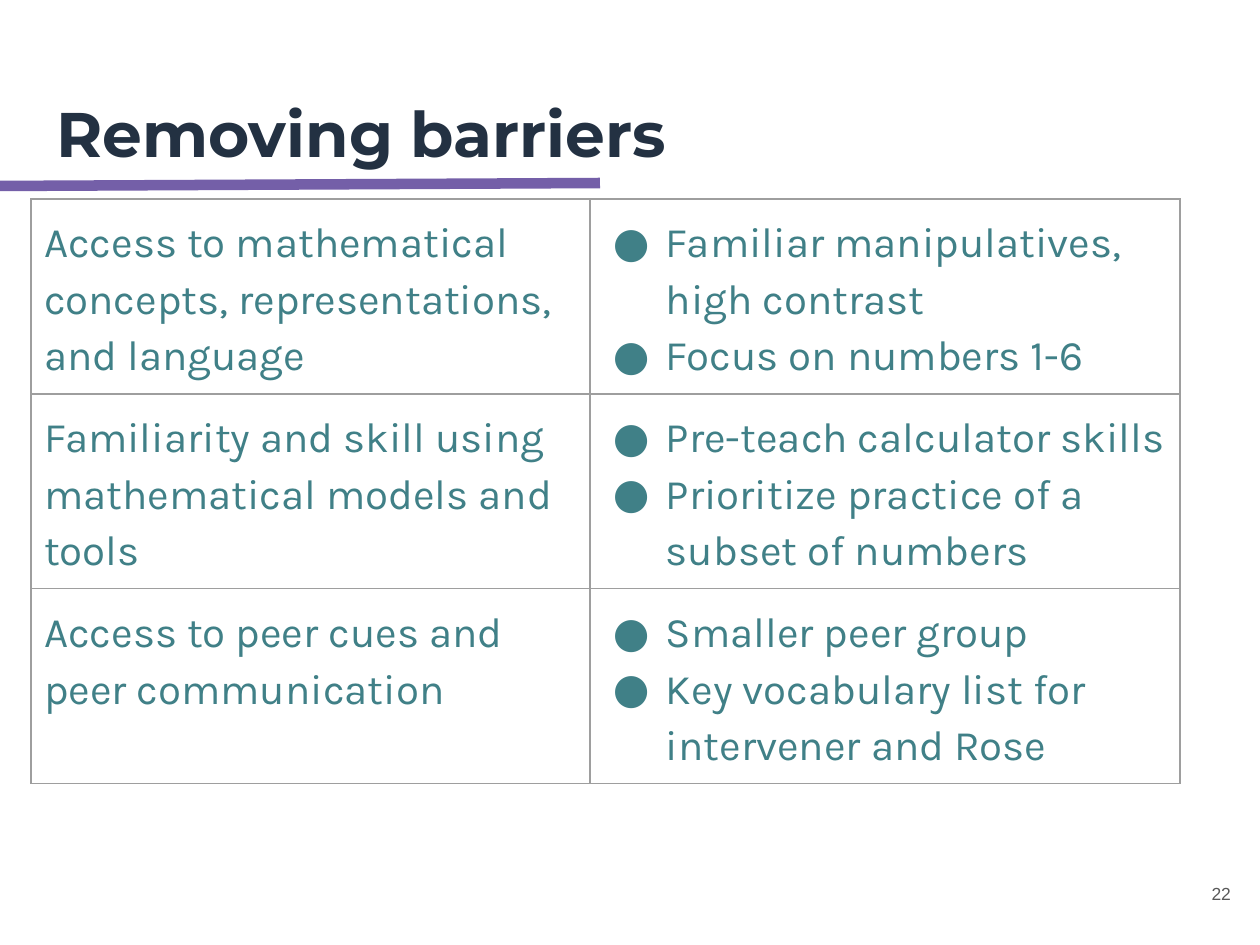
from lxml import etree
from pptx import Presentation
from pptx.dml.color import RGBColor
from pptx.enum.shapes import MSO_CONNECTOR
from pptx.enum.text import MSO_ANCHOR, MSO_AUTO_SIZE, PP_ALIGN
from pptx.oxml.ns import qn
from pptx.util import Emu, Pt

STRAIGHT = MSO_CONNECTOR.STRAIGHT
TOP, MIDDLE = MSO_ANCHOR.TOP, MSO_ANCHOR.MIDDLE
NO_FIT = MSO_AUTO_SIZE.NONE
LEFT, RIGHT = PP_ALIGN.LEFT, PP_ALIGN.RIGHT

NAVY = RGBColor(0x23, 0x31, 0x42)
TEAL = RGBColor(0x40, 0x80, 0x87)
PURPLE = RGBColor(0x74, 0x5F, 0xA8)
GRID = RGBColor(0x9E, 0x9E, 0x9E)
GRAY = RGBColor(0x59, 0x59, 0x59)

PX_PER_INCH = 126
INSET = 13
COLUMNS = (559, 590)
ROW_HEIGHT = 194
BARRIERS = [
    ("Access to mathematical concepts, representations, and language",
     ["Familiar manipulatives, high contrast", "Focus on numbers 1-6"]),
    ("Familiarity and skill using mathematical models and tools",
     ["Pre-teach calculator skills", "Prioritize practice of a subset of numbers"]),
    ("Access to peer cues and peer communication",
     ["Smaller peer group", "Key vocabulary list for intervener and Rose"]),
]


def px(n):
    return Emu(round(n * 914400 / PX_PER_INCH))


def set_font(font, name, size, color, bold=False):
    font.name, font.size, font.bold = name, Pt(size), bold
    font.color.rgb = color


def set_frame(obj):
    obj.margin_left = obj.margin_right = px(INSET)
    obj.margin_top = obj.margin_bottom = px(INSET)


def add_text(sp, text, box, anchor, align, *font):
    sp.left, sp.top, sp.width, sp.height = map(px, box)
    tf = sp.text_frame
    tf.word_wrap, tf.auto_size, tf.vertical_anchor = True, NO_FIT, anchor
    set_frame(tf)
    tf.text = text
    p = tf.paragraphs[0]
    p.alignment = align
    set_font(p.runs[0].font, *font)


def add_rule(s, x1, y1, x2, y2):
    line = s.shapes.add_connector(STRAIGHT, px(x1), px(y1), px(x2), px(y2))
    line.line.color.rgb, line.line.width = PURPLE, Pt(6)
    etree.SubElement(line._element.spPr, qn("a:effectLst"))


def add_bullet(p):
    pPr = p._p.get_or_add_pPr()
    pPr.set("marL", str(px(63)))
    pPr.set("indent", str(-px(53)))
    color = etree.SubElement(pPr, qn("a:buClr"))
    etree.SubElement(color, qn("a:srgbClr"), val=str(TEAL))
    etree.SubElement(pPr, qn("a:buFont"), typeface="Karla")
    etree.SubElement(pPr, qn("a:buChar"), char="●")


def set_borders(cell):
    tcPr = cell._tc.get_or_add_tcPr()
    for i, side in enumerate(("lnL", "lnR", "lnT", "lnB")):
        ln = etree.Element(qn(f"a:{side}"), w=str(Pt(0.75)))
        fill = etree.SubElement(ln, qn("a:solidFill"))
        etree.SubElement(fill, qn("a:srgbClr"), val=str(GRID))
        tcPr.insert(i, ln)


def fill_cell(cell, lines, bulleted):
    cell.fill.background()
    set_borders(cell)
    set_frame(cell)
    cell.text_frame.text = "\n".join(lines)
    for p in cell.text_frame.paragraphs:
        if bulleted:
            add_bullet(p)
        else:
            p.space_after = Pt(16)
        p.line_spacing = 1.15
        set_font(p.runs[0].font, "Karla", 24, TEAL)


def add_barrier_table(s, x, y):
    rows = len(BARRIERS)
    table = s.shapes.add_table(rows, len(COLUMNS), px(x), px(y),
                               px(sum(COLUMNS)), px(rows * ROW_HEIGHT)).table
    table.first_row = table.horz_banding = False
    for column, width in zip(table.columns, COLUMNS):
        column.width = px(width)
    for i, (barrier, supports) in enumerate(BARRIERS):
        table.rows[i].height = px(ROW_HEIGHT)
        fill_cell(table.cell(i, 0), [barrier], False)
        fill_cell(table.cell(i, 1), supports, True)


def main():
    prs = Presentation()
    prs.slide_width, prs.slide_height = px(1260), px(945)
    s = prs.slides.add_slide(prs.slide_layouts[5])
    add_rule(s, 0, 186, 600, 183)
    add_text(s.shapes.title, "Removing barriers", (43, 82, 1174, 105),
             TOP, LEFT, "Montserrat", 36, NAVY, True)
    add_barrier_table(s, 31, 199)
    number = s.shapes.add_textbox(0, 0, 0, 0)
    add_text(number, "22", (1168, 857, 76, 72), MIDDLE, RIGHT, "Arial", 10, GRAY)
    prs.save("out.pptx")


if __name__ == "__main__":
    main()
